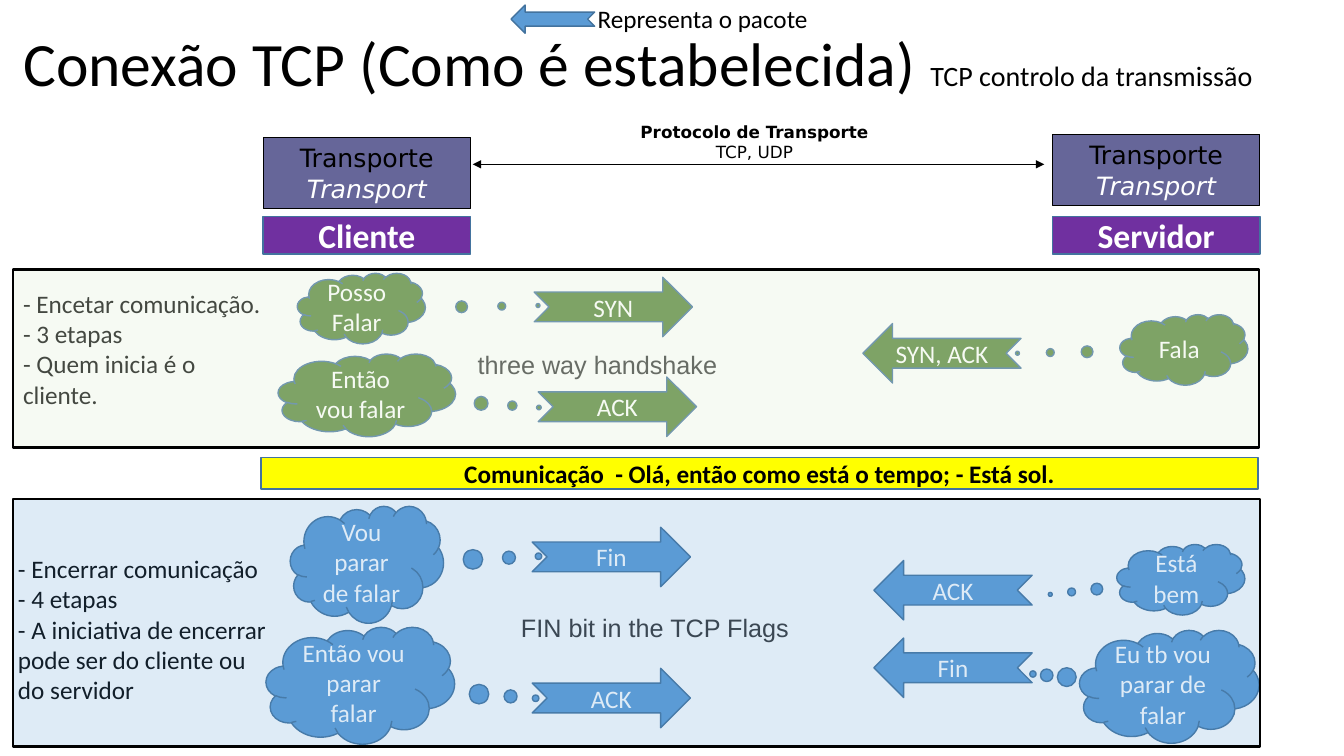
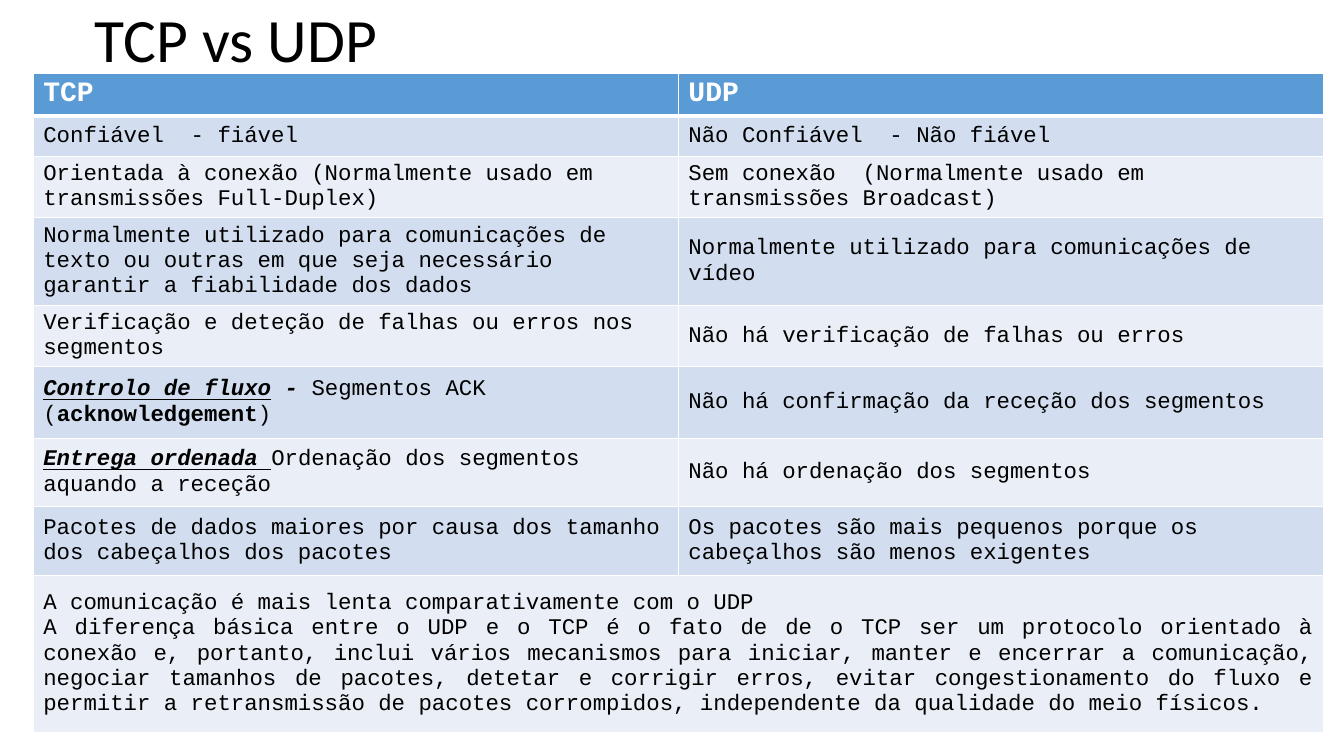
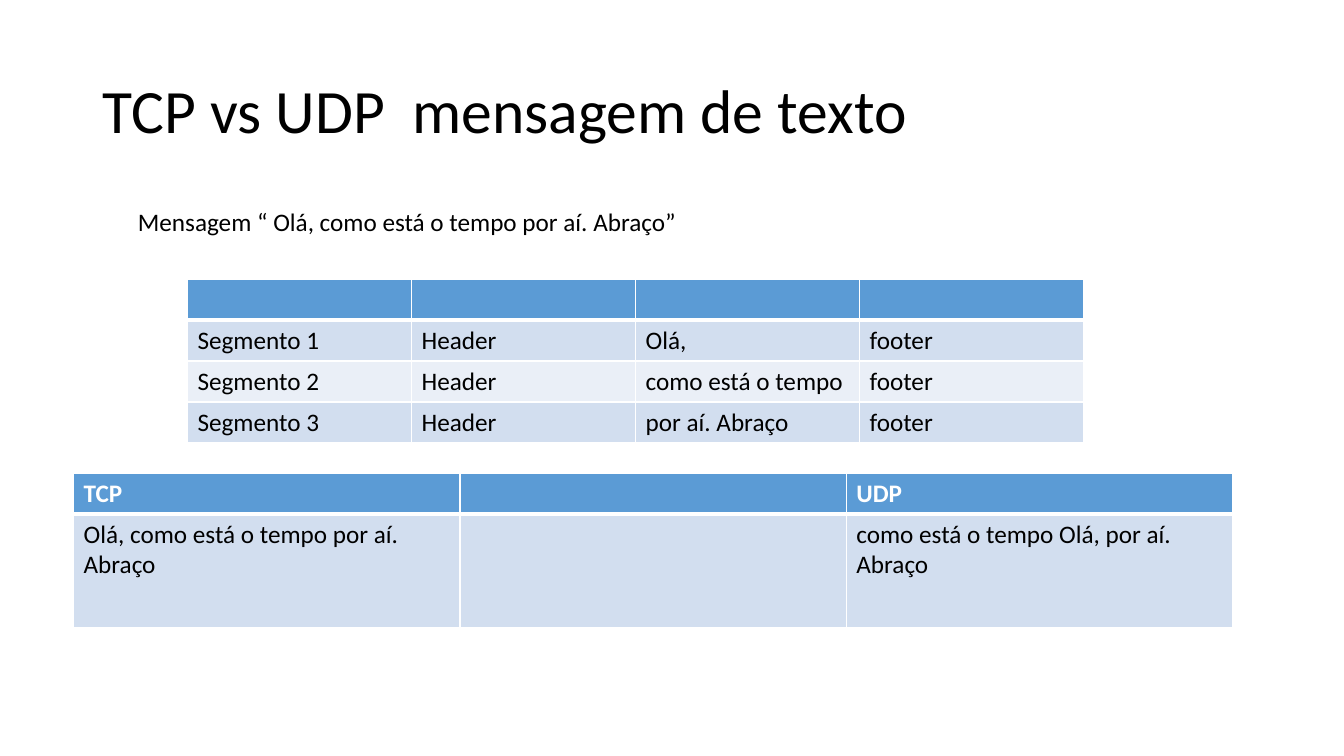
from typing import NamedTuple

import lxml.etree
import pptx
import pptx.dml.color
import pptx.enum.shapes
import pptx.enum.text
import pptx.oxml.ns
import pptx.util

RGB = pptx.dml.color.RGBColor
Pt = pptx.util.Pt
SHAPE = pptx.enum.shapes.MSO_SHAPE
ALIGN = pptx.enum.text.PP_ALIGN
ANCHOR = pptx.enum.text.MSO_ANCHOR
qn = pptx.oxml.ns.qn

# Grid: ten columns and ten rows to the inch
UNIT = pptx.util.Inches(0.1)
COLUMNS, ROWS = 133.33, 75

# Shared colours
BLACK = RGB(0x00, 0x00, 0x00)
WHITE = RGB(0xFF, 0xFF, 0xFF)
GREY = RGB(0x33, 0x33, 0x33)
BLUE = RGB(0x5B, 0x9B, 0xD5)
EDGE_BLUE = RGB(0x43, 0x73, 0x9E)
GREEN = RGB(0x54, 0x82, 0x35)
PALE_GREEN = RGB(0xE2, 0xF0, 0xD9)
SLATE = RGB(0x66, 0x66, 0x99)
PURPLE = RGB(0x70, 0x30, 0xA0)
YELLOW = RGB(0xFF, 0xFF, 0x00)
BANDS = (RGB(0xEA, 0xEF, 0xF7), RGB(0xD2, 0xDE, 0xEF))

# Shared text formats
BODY = {"name": "Calibri", "size": Pt(18), "color": BLACK}
TITLE = BODY | {"size": Pt(44)}
ON_SHAPE = BODY | {"color": WHITE}
ROLE = ON_SHAPE | {"size": Pt(24), "bold": True}
CAPTION = BODY | {"name": "Arial", "color": GREY}
LAYER = BODY | {"name": "DejaVu Sans"}
MONO = BODY | {"name": "Courier New", "size": Pt(16)}
KEY_TERM = {"bold": True, "italic": True, "underline": True}

ARROW_SIZE = (15.7, 5.9)


class Box(NamedTuple):
    left: float
    top: float
    width: float
    height: float

    def inside(self, left, top, width, height):
        return Box(self.left + left, self.top + top, width, height)

    def emu(self):
        return [round(length * UNIT) for length in self]


# ---- Building parts ----
def write_text(frame, content, text_format, align=ALIGN.LEFT):
    """Content is a string or a list of paragraphs; a paragraph is a string or a list of runs."""
    paragraphs = [content] if isinstance(content, str) else content
    for index, runs in enumerate(paragraphs):
        paragraph = frame.add_paragraph() if index else frame.paragraphs[0]
        paragraph.alignment = align
        for words, changes in [(runs, {})] if isinstance(runs, str) else runs:
            run = paragraph.add_run()
            run.text = words
            for attribute, value in (text_format | changes).items():
                if attribute == "color":
                    run.font.color.rgb = value
                else:
                    setattr(run.font, attribute, value)


def add_text(slide, box, content, text_format, align=ALIGN.LEFT):
    frame = slide.shapes.add_textbox(*box.emu()).text_frame
    frame.word_wrap = True
    write_text(frame, content, text_format, align)


def add_block(slide, kind, box, fill, content="", text_format=ON_SHAPE,
              edge=EDGE_BLUE, edge_width=1, opacity=None):
    block = slide.shapes.add_shape(kind, *box.emu())
    block.shadow.inherit = False
    block.fill.solid()
    block.fill.fore_color.rgb = fill
    if opacity:
        colour = block.fill._xPr.find(".//" + qn("a:srgbClr"))
        lxml.etree.SubElement(colour, qn("a:alpha"), val=str(opacity * 1000))
    block.line.color.rgb = edge
    block.line.width = Pt(edge_width)
    if content:
        block.text_frame.word_wrap = True
        block.text_frame.vertical_anchor = ANCHOR.MIDDLE
        write_text(block.text_frame, content, text_format, ALIGN.CENTER)
    return block


def add_packet(slide, box, fill, content="", to_left=False):
    packet = add_block(slide, SHAPE.NOTCHED_RIGHT_ARROW, box, fill, content)
    if to_left:
        packet._element.spPr.find(qn("a:xfrm")).set("flipH", "1")


def titled_slide(deck, box, runs):
    slide = deck.slides.add_slide(deck.slide_layouts[5])
    title = slide.shapes.title
    title.left, title.top, title.width, title.height = box.emu()
    title.text_frame.auto_size = pptx.enum.text.MSO_AUTO_SIZE.NONE
    title.text_frame.vertical_anchor = ANCHOR.MIDDLE
    write_text(title.text_frame, [runs], TITLE)
    title.text_frame.paragraphs[0].line_spacing = 0.9
    return slide


def set_borders(cell, widths):
    properties = cell._tc.get_or_add_tcPr()
    for side, width in zip("LRTB", widths):
        border = lxml.etree.SubElement(properties, qn(f"a:ln{side}"), w=str(Pt(width)))
        fill = lxml.etree.SubElement(border, qn("a:solidFill"))
        lxml.etree.SubElement(fill, qn("a:srgbClr"), val=str(WHITE))


def banded_table(slide, box, row_heights, rows, text_format, header_size, anchor=ANCHOR.TOP):
    columns = len(rows[0])
    table = slide.shapes.add_table(len(rows), columns, *box.emu()).table
    for column in table.columns:
        column.width = round(box.width * UNIT / columns)
    header_format = text_format | {"size": header_size, "color": WHITE, "bold": True}
    for r, (height, contents) in enumerate(zip(row_heights, rows)):
        table.rows[r].height = round(height * UNIT)
        for c in range(columns):
            cell = table.cell(r, c)
            set_borders(cell, (1, 1, 3 if r == 1 else 1, 3 if r == 0 else 1))
            cell.fill.solid()
            cell.fill.fore_color.rgb = BANDS[r % 2] if r else BLUE
            cell.vertical_anchor = anchor if r else ANCHOR.TOP
            if c < len(contents) and contents[c]:
                write_text(cell.text_frame, contents[c], text_format if r else header_format)
    return table


# ---- Regions of the connection slide ----
def endpoint(slide, box, role):
    transport_height, role_height = 7.1, 3.7
    add_block(slide, SHAPE.RECTANGLE, box.inside(0, 0, box.width, transport_height), SLATE,
              ["Transporte", [("Transport", {"color": WHITE, "italic": True})]],
              LAYER, BLACK, 0.75)
    add_block(slide, SHAPE.RECTANGLE,
              box.inside(0, box.height - role_height, box.width, role_height),
              PURPLE, role, ROLE)


def protocol_link(slide, box):
    left, top, width, height = box.emu()
    link = slide.shapes.add_connector(pptx.enum.shapes.MSO_CONNECTOR.STRAIGHT,
                                      left, top + height, left + width, top + height)
    link.line.color.rgb = BLACK
    link.line.width = Pt(0.75)
    for end in ("headEnd", "tailEnd"):
        lxml.etree.SubElement(link.line._ln, qn(f"a:{end}"), type="triangle")
    lxml.etree.SubElement(link._element.spPr, qn("a:effectLst"))
    add_text(slide, box.inside(12.7, 0, 30.5, 5.1),
             [[("Protocolo de Transporte", {"bold": True})], "TCP, UDP"],
             LAYER | {"size": Pt(12)}, ALIGN.CENTER)


def packet_legend(slide, box):
    add_packet(slide, box.inside(0, 0.7, 8.3, 2.8), BLUE, to_left=True)
    add_text(slide, box.inside(7.6, 0, box.width - 7.6, box.height),
             "Representa o pacote", BODY)


def phase_panel(slide, box, colour, veil, opacity, notes, caption, packets, thoughts):
    """The translucent panel lies over its parts and tints them."""
    for content, left, top, to_left in packets:
        add_packet(slide, box.inside(left, top, *ARROW_SIZE), colour, content, to_left)
    for content, place, tail in thoughts:
        cloud = add_block(slide, SHAPE.CLOUD_CALLOUT, box.inside(*place), colour, content)
        cloud.adjustments[0], cloud.adjustments[1] = tail
    for (content, place), text_format in ((notes, BODY), (caption, CAPTION)):
        add_text(slide, box.inside(*place), content, text_format)
    add_block(slide, SHAPE.RECTANGLE, box, veil, edge=BLACK, edge_width=2, opacity=opacity)


# ---- Slides ----
def connection_slide(deck):
    slide = titled_slide(deck, Box(1.3, 1.6, 130, 10.1), [
        ("Conexão TCP (Como é estabelecida) ", {}),
        ("TCP controlo da transmissão", {"size": Pt(20)})])
    endpoint(slide, Box(26.1, 13.6, 20.6, 11.6), "Cliente")
    endpoint(slide, Box(104.4, 13.3, 20.6, 11.9), "Servidor")
    protocol_link(slide, Box(46.9, 11.6, 56.7, 4.7))
    add_block(slide, SHAPE.RECTANGLE, Box(25.9, 45.4, 98.9, 3.1), YELLOW,
              "Comunicação  - Olá, então como está o tempo; - Está sol.",
              BODY | {"bold": True})
    # Opening: three way handshake
    phase_panel(
        slide, Box(1.3, 26.7, 123.6, 17.7), GREEN, PALE_GREEN, 30,
        notes=(["- Encetar comunicação.", "- 3 etapas", "- Quem inicia é o cliente."],
               (0, 1.4, 26.8, 13.1)),
        caption=("three way handshake", (45.1, 7.5, 26.7, 4)),
        packets=[("SYN", 51.7, 0.8, False),
                 ("SYN, ACK", 84.3, 5.4, True),
                 ("ACK", 52.1, 10.7, False)],
        thoughts=[("Posso Falar", (28.2, 0.4, 12.7, 7), (1.38, -0.04)),
                  ("Fala", (109.8, 4.5, 12.7, 7), (-1.3, 0.05)),
                  ("Então vou falar", (26.3, 8.4, 17.6, 8.2), (0.97, 0.15))])
    # Closing: four steps
    phase_panel(
        slide, Box(1.3, 49.5, 123.7, 24.6), BLUE, BLUE, 20,
        notes=(["- Encerrar comunicação", "- 4 etapas",
                "- A iniciativa de encerrar pode ser do cliente ou do servidor"],
               (-0.5, 4.9, 26.8, 16.2)),
        caption=("FIN bit in the TCP Flags", (49.4, 10.8, 28.9, 4)),
        packets=[("Fin", 51.5, 2.8, False),
                 ("ACK", 85.4, 6.1, True),
                 ("Fin", 85.4, 13.8, True),
                 ("ACK", 51.5, 16.8, False)],
        thoughts=[("Vou parar de falar", (27.5, 0.7, 15.2, 11.6), (1.12, -0.07)),
                  ("Está bem", (109.5, 4.5, 12.7, 7), (-1.02, 0.21)),
                  ("Eu tb vou parar de falar", (105.8, 13, 17.8, 11.2), (-0.76, -0.11)),
                  ("Então vou parar falar", (25.1, 12.7, 18.7, 11.6), (0.93, 0.11))])
    packet_legend(slide, Box(50.7, -0.2, 30.7, 4))


def comparison_slide(deck):
    slide = titled_slide(deck, Box(8.4, 0, 115, 8.5), [("TCP vs UDP", {})])
    rows = [
        ("TCP", "UDP"),
        ("Confiável  - fiável", "Não Confiável  - Não fiável"),
        ("Orientada à conexão (Normalmente usado em transmissões Full-Duplex)",
         "Sem conexão  (Normalmente usado em transmissões Broadcast)"),
        ("Normalmente utilizado para comunicações de texto ou outras em que seja "
         "necessário garantir a fiabilidade dos dados",
         "Normalmente utilizado para comunicações de vídeo"),
        ("Verificação e deteção de falhas ou erros nos segmentos",
         "Não há verificação de falhas ou erros"),
        ([[("Controlo de fluxo", KEY_TERM), (" - ", {"bold": True, "italic": True}),
           ("Segmentos ACK (", {}), ("acknowledgement", {"bold": True}), (")", {})]],
         "Não há confirmação da receção dos segmentos"),
        ([[("Entrega ordenada ", KEY_TERM),
           ("Ordenação dos segmentos aquando a receção", {})]],
         "Não há ordenação dos segmentos"),
        ("Pacotes de dados maiores por causa dos tamanho dos cabeçalhos dos pacotes",
         "Os pacotes são mais pequenos porque os cabeçalhos são menos exigentes"),
        (["A comunicação é mais lenta comparativamente com o UDP",
          "A diferença básica entre o UDP e o TCP é o fato de de o TCP ser um protocolo "
          "orientado à conexão e, portanto, inclui vários mecanismos para iniciar, manter e "
          "encerrar a comunicação, negociar tamanhos de pacotes, detetar e corrigir erros, "
          "evitar congestionamento do fluxo e permitir a retransmissão de pacotes "
          "corrompidos, independente da qualidade do meio físicos."],),
    ]
    heights = (4.2, 4, 6.1, 8.7, 6.1, 7.1, 6.8, 6.8, 15.6)
    table = banded_table(slide, Box(3.3, 7.3, 128, 66.4), heights, rows, MONO, Pt(20),
                         ANCHOR.MIDDLE)
    # The closing remark spans both columns
    remark = table.cell(len(rows) - 1, 0)
    remark.merge(table.cell(len(rows) - 1, 1))
    for paragraph in remark.text_frame.paragraphs:
        paragraph.alignment = ALIGN.JUSTIFY


def message_slide(deck):
    slide = titled_slide(deck, Box(9.2, 4, 115, 14.5),
                         [("TCP vs UDP  mensagem de texto", {})])
    add_text(slide, Box(12.7, 20, 56, 4),
             "Mensagem “ Olá, como está o tempo por aí. Abraço”", BODY)
    pieces = ("Olá,", "como está o tempo", "por aí. Abraço")
    segments = [("",) * 4] + [(f"Segmento {number}", "Header", piece, "footer")
                              for number, piece in enumerate(pieces, 1)]
    banded_table(slide, Box(18.6, 27.7, 88.9, 16.2), (4.06,) * 4, segments, BODY, Pt(18))
    arrivals = [("TCP", "", "UDP"),
                ("Olá, como está o tempo por aí. Abraço", "",
                 "como está o tempo Olá, por aí. Abraço")]
    banded_table(slide, Box(7.3, 47, 115, 15.3), (4, 11.3), arrivals, BODY, Pt(18))


def main():
    deck = pptx.Presentation()
    deck.slide_width = round(COLUMNS * UNIT)
    deck.slide_height = ROWS * UNIT
    connection_slide(deck)
    comparison_slide(deck)
    message_slide(deck)
    deck.save("out.pptx")


if __name__ == "__main__":
    main()
